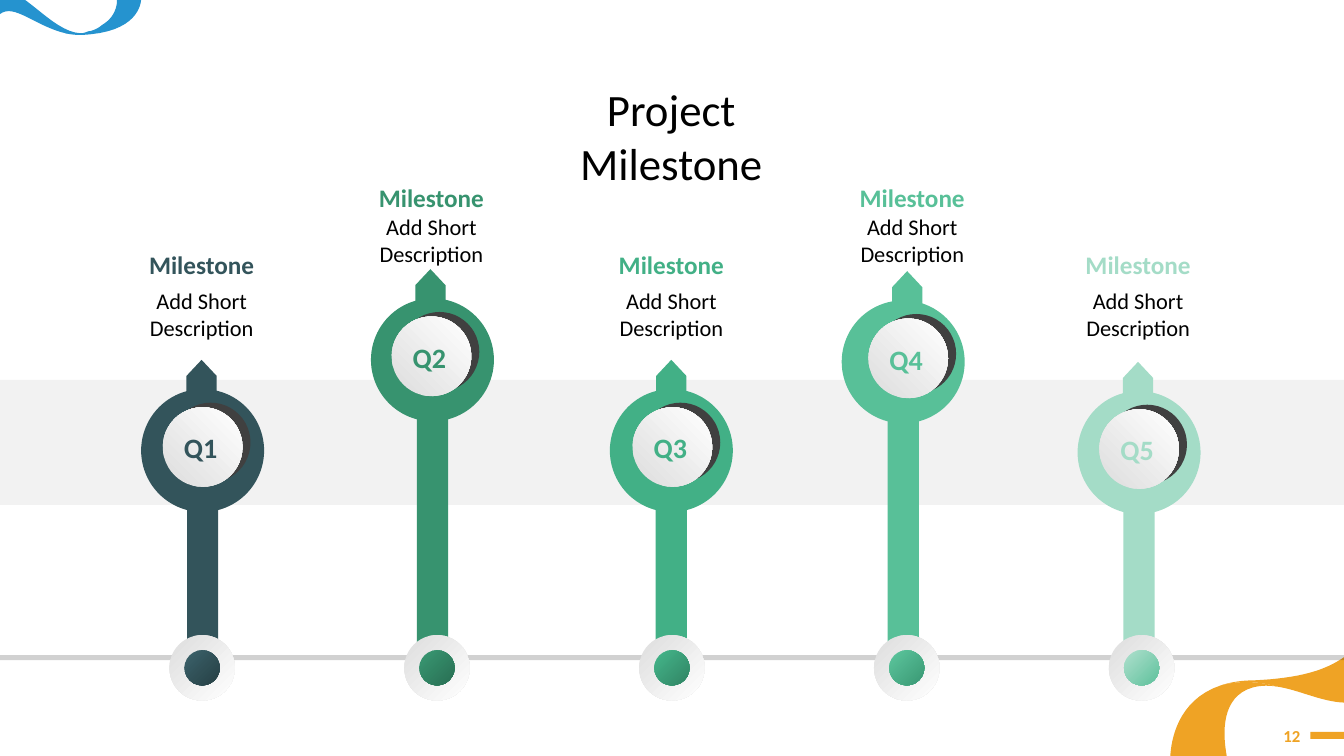
from collections import namedtuple

from lxml import etree
from pptx import Presentation
from pptx.dml.color import RGBColor
from pptx.enum.shapes import MSO_SHAPE
from pptx.enum.text import MSO_ANCHOR, PP_ALIGN
from pptx.oxml.ns import qn
from pptx.util import Emu, Inches, Pt

# The grid is made of square cells, 0.1 inch a side
CELL = Inches(0.1)
COLUMNS, ROWS = 133.33, 75
FONT = "Calibri"

COLORS = {
    "black": "000000", "band": "F2F2F2", "shadow": "404040",
    "silver": "E2E2E2", "white": "FFFFFF", "orange": "EFA325", "blue": "2593CF",
    "Q1": "33545B", "Q2": "37936F", "Q3": "42B086", "Q4": "58C098", "Q5": "A4DCC7",
    "Q1 light": "395E66", "Q1 dark": "263F44", "Q2 dark": "296E53",
    "Q3 dark": "318464", "Q4 dark": "3A9874", "Q5 dark": "5FC19C",
}

# Columns of the ring, arrow head and caption centres; row of the ring's top
Milestone = namedtuple("Milestone", "quarter ring head caption top")
MILESTONES = [
    Milestone("Q1", 20.1, 20.0, 20.0, 38.6),
    Milestone("Q2", 42.9, 42.7, 42.8, 29.6),
    Milestone("Q3", 66.6, 66.6, 66.6, 38.6),
    Milestone("Q4", 89.6, 90.0, 90.5, 29.8),
    Milestone("Q5", 113.0, 112.9, 112.9, 38.8),
]
DOT_START, DOT_PITCH, DOT_ROW = 20.05, 23.3, 66.25
RING, FACE, DOT_RIM, DOT = 12.2, 7.9, 6.5, 3.5
STEM_WIDTH, STEM_END, HEAD_WIDTH = 3.1, 65.9, 3.0

# Ribbons: a start, then straight steps (one point) and curves (three points)
ORANGE_RIBBONS = [
    ((124.3, 68.2), [
        [(125.1, 68.0), (125.8, 68.0), (126.6, 68.1)],
        [(126.6, 68.1), (124.0, 67.2), (121.1, 68.0)],
        [(116.7, 69.5), (116.2, 73.6), (116.1, 75)],
        [(121.7, 75)],
        [(121.3, 72.8), (121.1, 69.1), (124.3, 68.2)]]),
    ((124.3, 67.5), [
        [(123.1, 67.5), (122.0, 67.7), (121.1, 68.0)],
        [(124.0, 67.2), (126.6, 68.1), (126.6, 68.1)],
        [(128.8, 68.4), (131.0, 69.6), (COLUMNS, 69.7)],
        [(COLUMNS, 65.2)],
        [(131.5, 66.5), (128.9, 67.3), (124.3, 67.5)]]),
]
BLUE_RIBBONS = [
    ((14.0, -0.1), [
        [(11.6, -0.1)],
        [(11.6, -0.1), (11.8, 1.5), (10.1, 2.5)],
        [(10.1, 2.5), (9.7, 2.9), (8.9, 3.1)],
        [(8.8, 3.1)],
        [(8.5, 3.2), (8.3, 3.3), (8.0, 3.3)],
        [(6.5, 3.3)],
        [(7.3, 3.5), (8.1, 3.5), (9.0, 3.4)],
        [(14.1, 2.9), (14.0, -0.1), (14.0, -0.1)]]),
    ((8.0, 3.3), [
        [(5.1, 3.2), (1.9, -1.7), (0, -0.8)],
        [(0, 1.4)],
        [(1.4, 0.3), (3.5, 2.6), (6.5, 3.3)],
        [(8.0, 3.3)]]),
]


def cells(count):
    return Emu(round(count * CELL))


def color(name):
    return RGBColor.from_string(COLORS[name])


def paint(shape, *names):
    """Fill with one colour, or with a diagonal blend of two."""
    shape.shadow.inherit = False
    shape.line.fill.background()
    if len(names) == 1:
        shape.fill.solid()
        shape.fill.fore_color.rgb = color(names[0])
        return shape
    shape.fill.gradient()
    shape.fill.gradient_angle = 315
    for stop, name, position in zip(shape.fill.gradient_stops, names, (0.14, 1)):
        stop.color.rgb = color(name)
        stop.position = position
    return shape


def add_bar(slide, left, top, width, height, name):
    bar = slide.shapes.add_shape(MSO_SHAPE.RECTANGLE, cells(left), cells(top),
                                 cells(width), cells(height))
    return paint(bar, name)


def add_disc(slide, center, middle, size, *names):
    disc = slide.shapes.add_shape(MSO_SHAPE.OVAL, cells(center - size / 2),
                                  cells(middle - size / 2), cells(size), cells(size))
    return paint(disc, *names)


def add_outline(slide, points, name):
    start, *rest = [(cells(x), cells(y)) for x, y in points]
    builder = slide.shapes.build_freeform(*start, scale=1.0)
    builder.add_line_segments(rest, close=True)
    return paint(builder.convert_to_shape(), name)


def add_ribbon(slide, start, steps, name, pieces=16):
    points = [start]
    for step in steps:
        if len(step) == 1:
            points += step
            continue
        corners = [points[-1], *step]
        for piece in range(1, pieces + 1):
            t = piece / pieces
            weights = ((1 - t) ** 3, 3 * t * (1 - t) ** 2, 3 * t * t * (1 - t), t ** 3)
            points.append(tuple(sum(w * corner[axis] for w, corner in zip(weights, corners))
                                for axis in (0, 1)))
    add_outline(slide, points, name)


def write(frame, words, size, name, bold=False, align=PP_ALIGN.CENTER,
          anchor=MSO_ANCHOR.MIDDLE):
    frame.word_wrap = True
    frame.vertical_anchor = anchor
    paragraph = frame.paragraphs[0]
    paragraph.alignment = align
    run = paragraph.add_run()
    run.text = words
    run.font.name, run.font.size, run.font.bold = FONT, Pt(size), bold
    run.font.color.rgb = color(name)


def add_label(slide, center, top, width, height, *args, **options):
    label = slide.shapes.add_textbox(cells(center - width / 2), cells(top),
                                     cells(width), cells(height))
    write(label.text_frame, *args, **options)


def add_title(slide):
    title = slide.shapes.title
    title.left, title.top = cells(50.2), cells(7.6)
    title.width, title.height = cells(32.8), cells(6.4)
    frame = title.text_frame
    frame.margin_left = frame.margin_right = cells(3)
    frame.margin_top = frame.margin_bottom = cells(0.5)
    write(frame, "Project Milestone", 32, "black", anchor=MSO_ANCHOR.TOP)


def add_timeline(slide):
    timeline = add_bar(slide, 0, 65, COLUMNS, 0.5, "black")
    tint = timeline.fill._xPr.find(qn("a:solidFill"))[0]
    etree.SubElement(tint, qn("a:alpha"), val="18000")


def add_milestone(slide, item):
    quarter, top = item.quarter, item.top
    # Stem, ring and arrow head
    add_bar(slide, item.ring - STEM_WIDTH / 2, top + 7, STEM_WIDTH,
            STEM_END - top - 7, quarter)
    add_disc(slide, item.ring, top + RING / 2, RING, quarter)
    left, right = item.head - HEAD_WIDTH / 2, item.head + HEAD_WIDTH / 2
    add_outline(slide, [(left, top - 1.3), (left, top + 1.4), (right, top + 1.4),
                        (right, top - 1.3), (item.head, top - 2.9)], quarter)
    # Raised face with its shadow
    add_disc(slide, item.head + 0.9, top + 5.3, FACE, "shadow")
    face = add_disc(slide, item.head + 0.1, top + 5.75, FACE, "silver", "white")
    face.rotation = 270
    add_label(slide, item.head - 0.1, top + 3.6, 9.2, 4.4, quarter, 20, quarter, bold=True)
    # Caption, closer together above the tall stems
    name_top, description_top = (17.6, 20.6) if top < 35 else (24.2, 28)
    add_label(slide, item.caption, name_top, 14, 4, "Milestone", 18, quarter, bold=True)
    add_label(slide, item.caption, description_top, 14.2, 6.4,
              "Add Short Description", 16, "black")


def add_dot(slide, index, quarter):
    center = DOT_START + index * DOT_PITCH
    light = "Q1 light" if quarter == "Q1" else quarter
    add_disc(slide, center, DOT_ROW, DOT_RIM, "silver", "white")
    add_disc(slide, center, DOT_ROW, DOT, light, quarter + " dark")


def main():
    deck = Presentation()
    deck.slide_width, deck.slide_height = cells(COLUMNS), cells(ROWS)
    slide = deck.slides.add_slide(deck.slide_layouts[5])

    # Background band, title and page number
    add_bar(slide, 0, 37.7, COLUMNS, 12.4, "band")
    add_title(slide)
    # Corner ribbons
    for name, ribbons in (("orange", ORANGE_RIBBONS), ("blue", BLUE_RIBBONS)):
        for start, steps in ribbons:
            add_ribbon(slide, start, steps, name)
    add_label(slide, 126.35, 71, 7.3, 4, "12", 12, "orange", bold=True,
              align=PP_ALIGN.RIGHT)
    add_bar(slide, 130, 72.6, COLUMNS - 130, 0.7, "orange")

    # Timeline with its milestones
    add_timeline(slide)
    for item in MILESTONES:
        add_milestone(slide, item)
    for index, item in enumerate(MILESTONES):
        add_dot(slide, index, item.quarter)

    deck.save("out.pptx")


if __name__ == "__main__":
    main()
